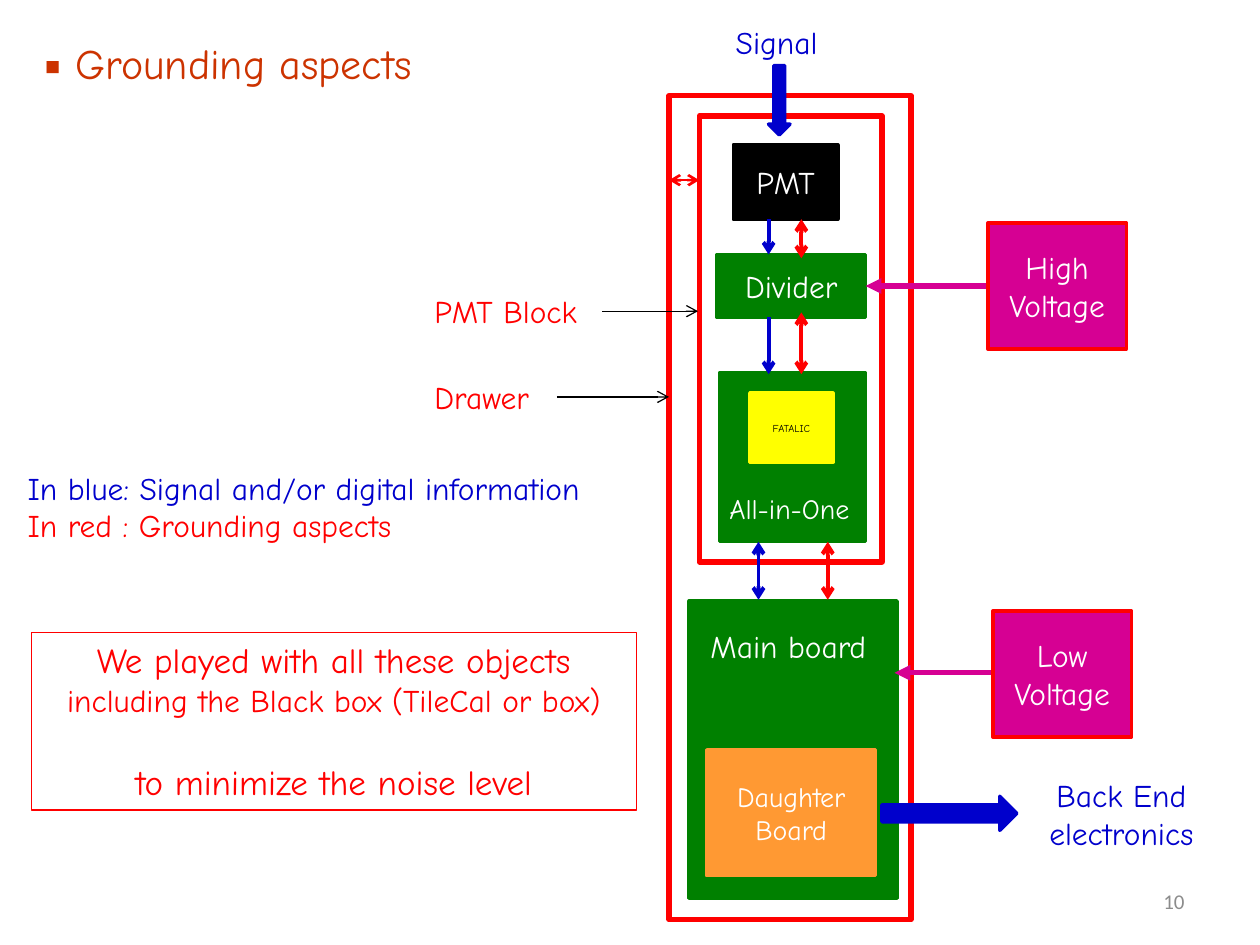
from pptx import Presentation
from pptx import util as u
from pptx.dml.color import RGBColor
from pptx.enum import shapes, text
from pptx.oxml.ns import qn
from lxml import etree

BLACK = RGBColor(0x00, 0x00, 0x00)
WHITE = RGBColor(0xFF, 0xFF, 0xFF)
GREEN = RGBColor(0x00, 0x80, 0x00)
YELLOW = RGBColor(0xFF, 0xFF, 0x00)
ORANGE = RGBColor(0xFF, 0x99, 0x33)
MAGENTA = RGBColor(0xD6, 0x00, 0x93)
RED = RGBColor(0xFF, 0x00, 0x00)
BLUE = RGBColor(0x00, 0x00, 0xCC)
RUST = RGBColor(0xCC, 0x33, 0x00)
GRAY = RGBColor(0x8C, 0x8C, 0x8C)

SHAPE = shapes.MSO_SHAPE
ALIGN = text.PP_ALIGN
ANCHOR = text.MSO_ANCHOR


class Diagram:
    font = "Comic Neue"

    def __init__(self, slide):
        self.slide = slide

    def add_lines(self, frame, lines, size, color, align=ALIGN.LEFT, font=None):
        """Fill a text frame; a line is a string or (string, size, color)."""
        for index, line in enumerate(lines):
            words, line_size, line_color = (
                (line, size, color) if isinstance(line, str) else line)
            paragraph = frame.paragraphs[0] if index == 0 else frame.add_paragraph()
            paragraph.alignment = align
            run = paragraph.add_run()
            run.text = words
            run.font.name = font or self.font
            run.font.size = u.Pt(line_size)
            run.font.color.rgb = line_color

    def title(self, words, box, size, color):
        title = self.slide.shapes.title
        title.left, title.top, title.width, title.height = map(u.Inches, box)
        frame = title.text_frame
        frame.auto_size = text.MSO_AUTO_SIZE.NONE
        frame.vertical_anchor = ANCHOR.TOP
        frame.word_wrap = False
        self.add_lines(frame, [words], size, color, ALIGN.CENTER)

    def label(self, lines, box, color, size=18, align=ALIGN.LEFT,
              font=None, anchor=ANCHOR.TOP, wrap=False):
        shape = self.slide.shapes.add_textbox(*map(u.Inches, box))
        shape.text_frame.word_wrap = wrap
        shape.text_frame.vertical_anchor = anchor
        self.add_lines(shape.text_frame, lines, size, color, align, font)

    def block(self, box, fill=None, line=None, width=2, lines=(), size=18,
              color=WHITE, kind=SHAPE.RECTANGLE, anchor=ANCHOR.MIDDLE):
        shape = self.slide.shapes.add_shape(kind, *map(u.Inches, box))
        shape.shadow.inherit = False
        if fill is None:
            shape.fill.background()
        else:
            shape.fill.solid()
            shape.fill.fore_color.rgb = fill
        shape.line.color.rgb = fill if line is None else line
        shape.line.width = u.Pt(width)
        shape.text_frame.word_wrap = False
        shape.text_frame.vertical_anchor = anchor
        self.add_lines(shape.text_frame, lines, size, color, ALIGN.CENTER)
        return shape

    def arrow(self, start, end, color, width=2.25, both=False, head="arrow"):
        connector = self.slide.shapes.add_connector(
            shapes.MSO_CONNECTOR.STRAIGHT, *map(u.Inches, (*start, *end)))
        connector.line.color.rgb = color
        connector.line.width = u.Pt(width)
        properties = connector._element.spPr
        line = properties.find(qn("a:ln"))
        for tag in ("a:headEnd", "a:tailEnd") if both else ("a:tailEnd",):
            etree.SubElement(line, qn(tag), type=head)
        etree.SubElement(properties, qn("a:effectLst"))


def main():
    presentation = Presentation()
    presentation.slide_width = u.Inches(10)
    presentation.slide_height = u.Inches(7.5)
    diagram = Diagram(presentation.slides.add_slide(presentation.slide_layouts[5]))

    diagram.title("▪ Grounding aspects", (0.12, 0.25, 3.38, 0.5), 24, RUST)

    # Boards, from the detector down to the read-out
    diagram.block((5.82, 1.15, 0.83, 0.59), BLACK, lines=["PMT"])
    diagram.block((5.69, 2.02, 1.18, 0.5), GREEN, lines=["Divider"])
    diagram.block((5.71, 2.96, 1.16, 1.34), GREEN)
    diagram.block((5.95, 3.12, 0.66, 0.55), YELLOW, lines=["FATALIC"],
                  size=6, color=BLACK)
    diagram.label(["All-in-One"], (5.69, 3.85, 1.27, 0.37), WHITE, 16)
    diagram.block((5.47, 4.77, 1.65, 2.36), GREEN)
    diagram.label(["Main board"], (5.54, 4.93, 1.51, 0.4), WHITE)
    diagram.block((5.61, 5.95, 1.34, 1), ORANGE, lines=["Daughter", "Board"], size=16)

    # Enclosures: PMT block inside the drawer
    diagram.block((5.55, 0.92, 1.45, 3.54), line=RED, width=3)
    diagram.block((5.31, 0.76, 1.92, 6.54), line=RED, width=3)
    diagram.arrow((5.31, 1.43), (5.55, 1.43), RED, 1.5, both=True)

    # Signal and ground links between boards
    for x, top, bottom, color, both in (
            (6.1, 1.74, 2.02, BLUE, False),
            (6.1, 2.52, 2.97, BLUE, False),
            (6.02, 4.3, 4.76, BLUE, True),
            (6.36, 1.74, 2.05, RED, True),
            (6.36, 2.48, 2.97, RED, True),
            (6.57, 4.3, 4.76, RED, True)):
        diagram.arrow((x, top), (x, bottom), color, both=both)

    # Signal in and out
    diagram.label(["Signal"], (5.74, 0.13, 0.91, 0.4), BLUE)
    diagram.block((6.1, 0.52, 0.17, 0.55), BLUE, kind=SHAPE.DOWN_ARROW)
    diagram.block((7, 6.32, 1.07, 0.27), BLUE, kind=SHAPE.RIGHT_ARROW)
    diagram.label(["Back End", "electronics"], (8.15, 6.11, 1.5, 0.71), BLUE,
                  align=ALIGN.CENTER)

    # Power supplies
    for level, left, top, start, end, y in (
            ("High", 7.84, 1.77, 7.84, 6.87, 2.27),
            ("Low", 7.88, 4.85, 8.07, 7.1, 5.34)):
        diagram.arrow((start, y), (end, y), MAGENTA, 3, head="triangle")
        diagram.block((left, top, 1.1, 1), MAGENTA, RED, lines=[level, "Voltage"])

    # Enclosure names
    for name, top, width, end in (("PMT Block", 2.27, 1.43, 5.54),
                                  ("Drawer", 2.95, 1.07, 5.31)):
        diagram.label([name], (3.35, top, width, 0.4), RED)
        diagram.arrow((3.35 + width, top + 0.2), (end, top + 0.2), BLACK, 0.75)

    diagram.label([("In blue: Signal and/or digital information", 18, BLUE),
                   ("In red : Grounding aspects", 18, RED)],
                  (0.12, 3.67, 5.02, 0.71), BLUE)

    conclusion = diagram.block(
        (0.25, 5.02, 4.8, 1.41), line=RED, width=0.75, size=20, color=RED,
        anchor=ANCHOR.TOP,
        lines=["We played with all these objects",
               ("including the Black box (TileCal or box)", 18, RED),
               "to minimize the noise level"])
    conclusion.text_frame.paragraphs[-1].space_before = u.Pt(24)

    diagram.label(["10"], (7.17, 6.95, 2.33, 0.4), GRAY, 12, ALIGN.RIGHT,
                  "Calibri", ANCHOR.MIDDLE, wrap=True)
    presentation.save("out.pptx")


if __name__ == "__main__":
    main()
